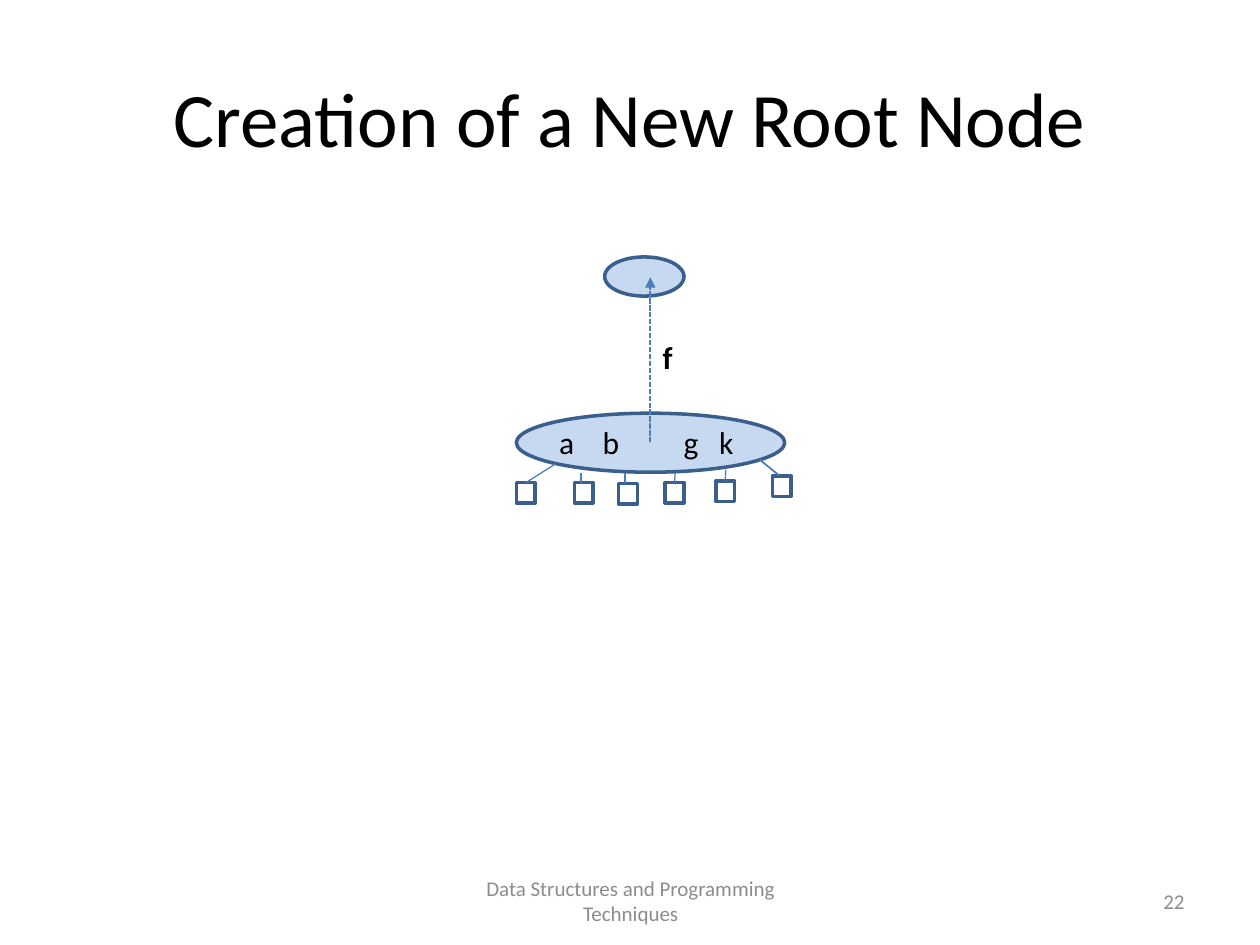
import pptx
import pptx.dml.color
import pptx.enum.dml
import pptx.enum.shapes
import pptx.enum.text
import pptx.oxml.ns
import pptx.util
from lxml import etree
from pptx.util import Cm

SHAPES = pptx.enum.shapes.MSO_SHAPE
ALIGN = pptx.enum.text.PP_ALIGN
ANCHOR = pptx.enum.text.MSO_ANCHOR
BLACK, GREY = "000000", "8C8C8C"
NODE_FILL, OUTLINE, LINK = "C6D9F1", "3A5F8C", "4B7EBC"


def color(value):
    return pptx.dml.color.RGBColor.from_string(value)


def add_element(parent, tag, **attributes):
    return etree.SubElement(parent, pptx.oxml.ns.qn(tag), attributes)


class Diagram:
    """Draws the parts of a tree diagram on one slide in a shared style."""

    font_name = "Calibri"

    def __init__(self, slide):
        self.slide = slide

    def format_text(self, shape, text, size, text_color, align, anchor, bold=False, tabs=()):
        frame = shape.text_frame
        frame.word_wrap = True
        frame.vertical_anchor = anchor
        frame.text = text
        paragraph = frame.paragraphs[0]
        paragraph.alignment = align
        if tabs:
            tab_list = add_element(paragraph._p.get_or_add_pPr(), "a:tabLst")
            for position in tabs:
                add_element(tab_list, "a:tab", pos=str(Cm(position)), algn="l")
        for run in paragraph.runs:
            run.font.name = self.font_name
            run.font.size = pptx.util.Pt(size)
            run.font.bold = bold
            run.font.color.rgb = color(text_color)

    def title(self, text, left, top, width, height):
        shape = self.slide.shapes.title
        shape.left, shape.top, shape.width, shape.height = map(Cm, (left, top, width, height))
        self.format_text(shape, text, 44, BLACK, ALIGN.CENTER, ANCHOR.MIDDLE)

    def text(self, text, left, top, width, height, size=18, text_color=BLACK,
             align=ALIGN.LEFT, anchor=ANCHOR.TOP, bold=False, tabs=()):
        shape = self.slide.shapes.add_textbox(*map(Cm, (left, top, width, height)))
        self.format_text(shape, text, size, text_color, align, anchor, bold, tabs)

    def shape(self, kind, left, top, width, height, fill=None):
        shape = self.slide.shapes.add_shape(kind, *map(Cm, (left, top, width, height)))
        shape.shadow.inherit = False
        if fill:
            shape.fill.solid()
            shape.fill.fore_color.rgb = color(fill)
        else:
            shape.fill.background()
        shape.line.color.rgb = color(OUTLINE)
        shape.line.width = pptx.util.Pt(2)
        return shape

    def link(self, start, end, width=0.75, target=None, arrow=False):
        connector = self.slide.shapes.add_connector(
            pptx.enum.shapes.MSO_CONNECTOR.STRAIGHT, *map(Cm, (*start, *end)))
        if target is not None:
            connector.end_connect(target, 0)
        connector.line.color.rgb = color(LINK)
        connector.line.width = pptx.util.Pt(width)
        if arrow:
            connector.line.dash_style = pptx.enum.dml.MSO_LINE.SQUARE_DOT
            add_element(connector.line._get_or_add_ln(), "a:tailEnd", type="triangle")
        add_element(connector._element.spPr, "a:effectLst")


def main():
    presentation = pptx.Presentation()
    presentation.slide_width, presentation.slide_height = Cm(25.4), Cm(19.05)
    slide = presentation.slides.add_slide(presentation.slide_layouts[5])
    diagram = Diagram(slide)

    diagram.title("Creation of a New Root Node", 1.27, 0.76, 22.86, 3.18)
    footer_style = {"size": 12, "text_color": GREY, "anchor": ANCHOR.MIDDLE}
    diagram.text("Data Structures and Programming Techniques", 8.69, 17.65, 8.05, 1.02,
                 align=ALIGN.CENTER, **footer_style)
    diagram.text("22", 18.21, 17.65, 5.92, 1.02, align=ALIGN.RIGHT, **footer_style)

    diagram.shape(SHAPES.OVAL, 10.41, 8.33, 5.41, 1.19, NODE_FILL)
    diagram.text("a\tb\tg\tk", 11.02, 8.41, 4.17, 1.02, tabs=(0.88, 2.51, 3.23))

    child_width, child_height = 0.38, 0.41
    children = [
        ((10.41, 9.73), (11.2, 9.35), None, 0.75),
        ((11.58, 9.73), (11.71, 9.53), (11.71, 9.73), 0.75),
        ((12.47, 9.75), (12.6, 9.53), (12.6, 9.73), 0.75),
        ((13.41, 9.73), (13.61, 9.53), None, 0.75),
        ((14.43, 9.7), (14.63, 9.47), None, 0.75),
        ((15.57, 9.6), (15.32, 9.27), (15.7, 9.58), 1),
    ]
    for corner, start, end, width in children:
        child = diagram.shape(SHAPES.RECTANGLE, *corner, child_width, child_height)
        if end:
            diagram.link(start, end, width)
        else:
            diagram.link(start, corner, width, target=child)

    diagram.shape(SHAPES.OVAL, 12.19, 5.18, 1.6, 0.79, NODE_FILL)
    diagram.link((13.11, 8.92), (13.11, 5.59), 1, arrow=True)
    diagram.text("f", 13.11, 6.68, 1.02, 1.02, bold=True)

    presentation.save("out.pptx")


if __name__ == "__main__":
    main()
